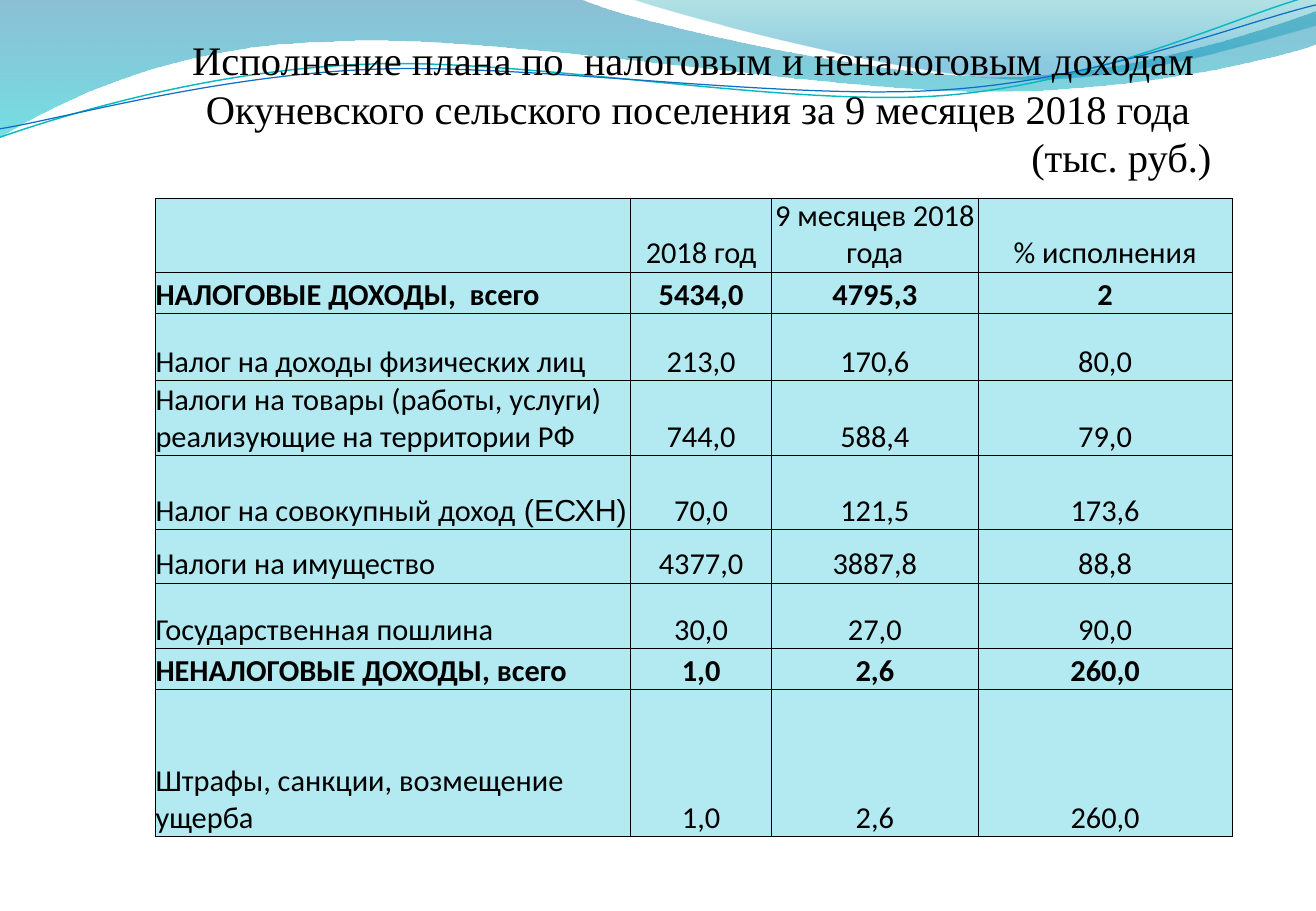
from lxml import etree
from pptx import Presentation
from pptx.dml.color import RGBColor
from pptx.enum.text import MSO_ANCHOR, PP_ALIGN
from pptx.oxml.ns import qn
from pptx.util import Inches, Pt

LEFT, CENTER, RIGHT = PP_ALIGN.LEFT, PP_ALIGN.CENTER, PP_ALIGN.RIGHT
BOTTOM = MSO_ANCHOR.BOTTOM
WIDE, HIGH = 10.83, 7.5
INK, PALE = "000000", "B3EAF2"

TITLE = [
    ("Исполнение плана по  налоговым и неналоговым доходам  "
     "Окуневского сельского поселения за 9 месяцев 2018 года", CENTER),
    ("(тыс. руб.)", RIGHT),
]

# Start point, then curves (three points each) and lines (one point each)
WAVES = [
    ([(0, 0), (4.77, -0.01),
      (5.15, 0.17, 7.19, 0.63, 8.22, 0.63), (9.24, 0.63, 10.38, 0.26, 10.83, 0.09),
      (10.84, 0.36),
      (10.65, 0.44, 9.42, 0.76, 8.08, 0.75), (6.74, 0.75, 4.14, 0.28, 2.79, 0.34),
      (1.4, 0.36, 0.5, 0.83, -0.01, 1.13)],
     [(0, "0074A1", 45), (1, "00C6CF", 55)]),
    ([(5.19, -0.01),
      (5.52, 0.11, 7.39, 0.62, 8.33, 0.65), (9.27, 0.69, 10.42, 0.32, 10.83, 0.21),
      (10.83, 0)],
     [(0, "00A1A9", 30), (0.8, "008BBF", 45)]),
]
THREADS = [
    ([(0, 1.13), (0.52, 0.95, 1.71, 0.58, 3, 0.53),
      (4.28, 0.47, 6.42, 0.88, 7.72, 0.79), (9.02, 0.7, 10.17, 0.13, 10.81, -0.04)],
     "0AB8BF", 0.85),
    ([(0, 1.06), (0.51, 0.98, 1.77, 0.62, 3.07, 0.57),
      (4.36, 0.52, 6.47, 0.83, 7.76, 0.74), (9.06, 0.66, 10.2, 0.19, 10.83, 0.04)],
     "0F6FC6", 0.75),
]

COLS = [3.91, 1.16, 1.7, 2.09]
ROWS = [0.61, 0.34, 0.55, 0.62, 0.61, 0.44, 0.54, 0.34, 1.21]
TOTALS = (1, 7)
TAIL = " (ЕСХН)"
DATA = [
    ["", "2018 год", "9 месяцев 2018 года", "% исполнения"],
    ["НАЛОГОВЫЕ ДОХОДЫ,  всего", "5434,0", "4795,3", "2"],
    ["Налог на доходы физических лиц", "213,0", "170,6", "80,0"],
    ["Налоги на товары (работы, услуги) реализующие на территории РФ",
     "744,0", "588,4", "79,0"],
    ["Налог на совокупный доход" + TAIL, "70,0", "121,5", "173,6"],
    ["Налоги на имущество", "4377,0", "3887,8", "88,8"],
    ["Государственная пошлина", "30,0", "27,0", "90,0"],
    ["НЕНАЛОГОВЫЕ ДОХОДЫ, всего", "1,0", "2,6", "260,0"],
    ["Штрафы, санкции, возмещение ущерба", "1,0", "2,6", "260,0"],
]


def color(code):
    return RGBColor.from_string(code)


def style(run, font, size, bold=False):
    run.font.name, run.font.size, run.font.bold = font, Pt(size), bold
    run.font.color.rgb = color(INK)


def bend(shape, line, part):
    """Turn a line of the outline into a cubic curve."""
    curve = etree.Element(qn("a:cubicBezTo"))
    for x, y in zip(part[::2], part[1::2]):
        etree.SubElement(curve, qn("a:pt"), x=str(Inches(x) - shape.left),
                         y=str(Inches(y) - shape.top))
    line.getparent().replace(line, curve)


def outline(slide, parts, close):
    points = [(Inches(part[-2]), Inches(part[-1])) for part in parts]
    pen = slide.shapes.build_freeform(*points[0])
    pen.add_line_segments(points[1:], close=close)
    shape = pen.convert_to_shape()
    shape.shadow.inherit = False
    lines = list(shape.element.spPr.iter(qn("a:lnTo")))
    for line, part in zip(lines, parts[1:]):
        if len(part) == 6:
            bend(shape, line, part)
    return shape


def wave(slide, parts, stops):
    shape = outline(slide, parts, True)
    shape.line.fill.background()
    shape.fill.gradient()
    shape.fill.gradient_angle = 270
    for stop, (place, code, _) in zip(shape.fill.gradient_stops, stops):
        stop.position, stop.color.rgb = place, color(code)
    tints = shape.element.spPr.iter(qn("a:srgbClr"))
    for tint, (_, _, share) in zip(tints, stops):
        etree.SubElement(tint, qn("a:alpha"), val=str(share * 1000))


def thread(slide, parts, code, width):
    shape = outline(slide, parts, False)
    shape.fill.background()
    shape.line.color.rgb, shape.line.width = color(code), Pt(width)


def title(slide):
    box = slide.shapes.add_textbox(Inches(1.2), 0, Inches(9.09), Inches(1.49))
    frame = box.text_frame
    frame.word_wrap, frame.vertical_anchor = True, BOTTOM
    frame.margin_left = frame.margin_right = frame.margin_bottom = 0
    frame.text = "\n".join(text for text, _ in TITLE)
    for para, (_, align) in zip(frame.paragraphs, TITLE):
        para.alignment, para.line_spacing = align, Pt(29)
        style(para.runs[0], "Times New Roman", 24)
    frame.paragraphs[-1]._p.get_or_add_pPr().set("marR", str(Inches(0.32)))


def border(cell):
    props = cell._tc.get_or_add_tcPr()
    for spot, side in enumerate(("lnL", "lnR", "lnT", "lnB")):
        line = etree.Element(qn("a:" + side), w=str(Pt(0.5)))
        fill = etree.SubElement(line, qn("a:solidFill"))
        etree.SubElement(fill, qn("a:srgbClr"), val=INK)
        props.insert(spot, line)


def fill_cell(cell, text, align, bold):
    cell.fill.solid()
    cell.fill.fore_color.rgb = color(PALE)
    cell.margin_left = cell.margin_right = cell.margin_top = cell.margin_bottom = 0
    cell.vertical_anchor = BOTTOM
    border(cell)
    para = cell.text_frame.paragraphs[0]
    para.text, para.alignment = text.removesuffix(TAIL), align
    for run in para.runs:
        style(run, "Calibri", 18, bold)
    if text.endswith(TAIL):
        run = para.add_run()
        run.text = TAIL
        style(run, "Arial", 18, bold)


def budget(slide):
    table = slide.shapes.add_table(
        len(ROWS), len(COLS), Inches(1.28), Inches(1.63),
        Inches(sum(COLS)), Inches(sum(ROWS))).table
    for col, width in zip(table.columns, COLS):
        col.width = Inches(width)
    for r, (height, texts) in enumerate(zip(ROWS, DATA)):
        table.rows[r].height = Inches(height)
        for c, text in enumerate(texts):
            fill_cell(table.cell(r, c), text, CENTER if c else LEFT, r in TOTALS)


def main():
    deck = Presentation()
    deck.slide_width, deck.slide_height = Inches(WIDE), Inches(HIGH)
    slide = deck.slides.add_slide(deck.slide_layouts[6])
    # Waves along the top edge
    for parts, stops in WAVES:
        wave(slide, parts, stops)
    for parts, code, width in THREADS:
        thread(slide, parts, code, width)
    # Heading and figures
    title(slide)
    budget(slide)
    deck.save("out.pptx")


if __name__ == "__main__":
    main()
